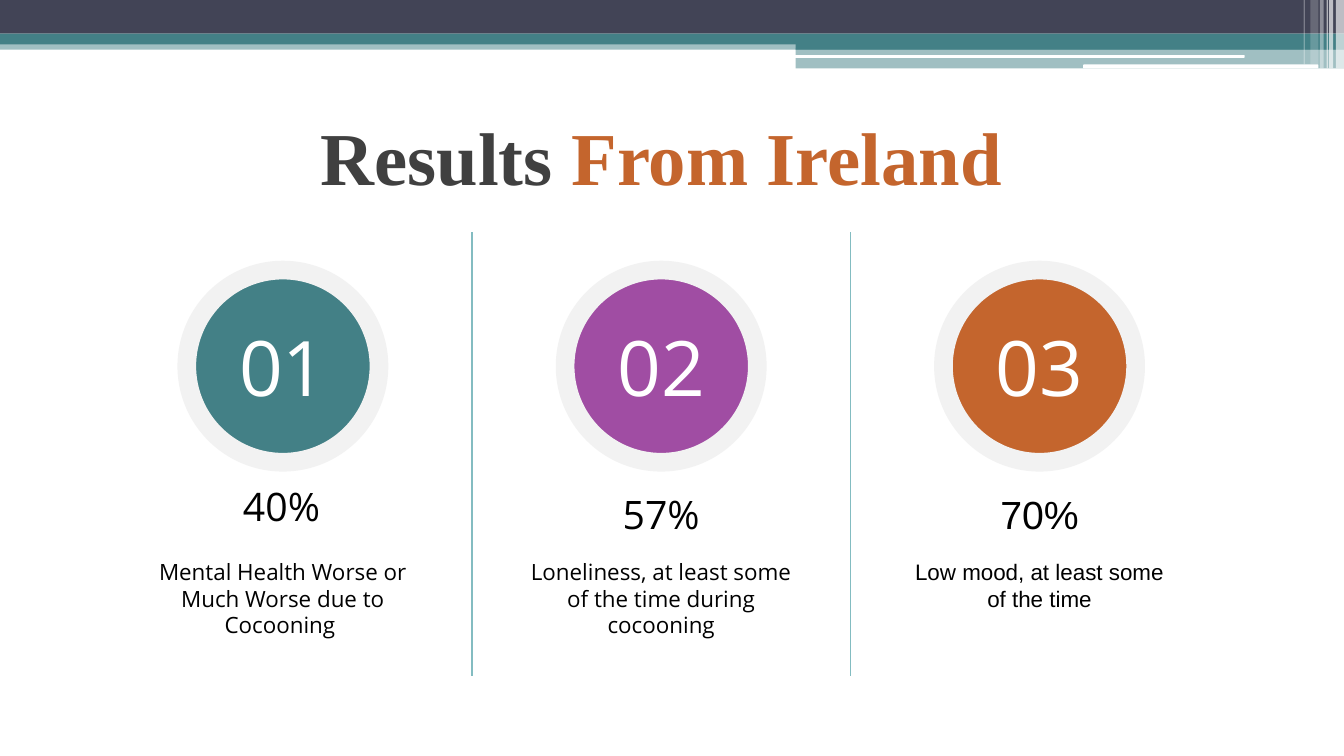
import pptx
import pptx.util
import pptx.dml.color
import pptx.enum.shapes
import pptx.enum.text
import pptx.oxml.ns
from lxml import etree

PX = 9144  # 100 px to the inch
SHAPES = pptx.enum.shapes.MSO_SHAPE
ANCHOR = pptx.enum.text.MSO_ANCHOR
AUTO_SIZE = pptx.enum.text.MSO_AUTO_SIZE
SANS, SERIF, ARIAL = "Open Sans", "Times New Roman", "Arial"
TEAL, NAVY, PURPLE, ORANGE = "438086", "424456", "A04DA3", "C4652D"
WHITE, BLACK, GREY, PALE, RULE = "FFFFFF", "000000", "404040", "F2F2F2", "83BCC1"


def emu(px):
    return pptx.util.Emu(round(px * PX))


def place(box):
    return [emu(px) for px in box]


def paint(color_format, color):
    color_format.rgb = pptx.dml.color.RGBColor.from_string(color)


def add_shape(page, kind, box, color, opacity=100):
    shape = page.shapes.add_shape(kind, *place(box))
    shape.shadow.inherit = False
    shape.fill.solid()
    paint(shape.fill.fore_color, color)
    shape.line.fill.background()
    if opacity < 100:
        tint = shape.fill._xPr.find(".//" + pptx.oxml.ns.qn("a:srgbClr"))
        alpha = etree.SubElement(tint, pptx.oxml.ns.qn("a:alpha"))
        alpha.set("val", str(opacity * 1000))
    return shape


def write(shape, spans, size, font, anchor, bold=False):
    """Write one centred paragraph; spans are (text, color) pairs."""
    frame = shape.text_frame
    frame.word_wrap = True
    frame.vertical_anchor = anchor
    frame.margin_left = frame.margin_right = emu(8)
    frame.margin_top = frame.margin_bottom = emu(4)
    para = frame.paragraphs[0]
    para.alignment = pptx.enum.text.PP_ALIGN.CENTER
    for text, color in spans:
        span = para.add_run()
        span.text = text
        span.font.size = pptx.util.Pt(size)
        span.font.name = font
        span.font.bold = bold
        paint(span.font.color, color)


def add_text(page, box, text, size, font, anchor):
    label = page.shapes.add_textbox(*place(box))
    write(label, [(text, BLACK)], size, font, anchor)
    label.text_frame.auto_size = AUTO_SIZE.SHAPE_TO_FIT_TEXT


def add_header(page, box):
    left, top, width, height = box
    step = 591  # where the lower band starts
    # Bands: x, y, height, color, opacity; each runs to the right edge
    for x, y, band_height, color, opacity in [
        (0, 30, 7, TEAL, 50),
        (0, 0, 25, NAVY, 100),
        (0, 25, 8, TEAL, 100),
        (step + 1, 30, 7, TEAL, 100),
        (step + 1, 36, 15, TEAL, 50),
    ]:
        band = (left + x, top + y, width - x, band_height)
        add_shape(page, SHAPES.RECTANGLE, band, color, opacity)
    # White slits
    for x, y, slit_width, slit_height in [(step, 41, 335, 2), (806, 48, 175, 3)]:
        slit = (left + x, top + y, slit_width, slit_height)
        add_shape(page, SHAPES.ROUNDED_RECTANGLE, slit, WHITE)
    # Translucent stripes at the right end
    for x, stripe_width, stripe_height, opacity in [
        (994, 6, height, 65),
        (989, 3, height, 65),
        (987, 1, height, 60),
        (982, 3, height, 40),
        (975, 6, height - 3, 20),
        (970, 1, height - 3, 30),
    ]:
        stripe = (left + x, top, stripe_width, stripe_height)
        add_shape(page, SHAPES.RECTANGLE, stripe, WHITE, opacity)


def add_title(page, box):
    title = page.shapes.title
    title.left, title.top, title.width, title.height = place(box)
    spans = [("Results ", GREY), ("From Ireland", ORANGE)]
    write(title, spans, 40, SERIF, ANCHOR.MIDDLE, bold=True)


def add_result(page, box, number, color, percent, shift, finding, lines, font):
    left, top, width, _ = box
    # Numbered disc
    disc = 143
    disc_box = (left + (width - disc) / 2, top + 28, disc, disc)
    circle = add_shape(page, SHAPES.OVAL, disc_box, color)
    paint(circle.line.color, PALE)
    circle.line.width = pptx.util.Pt(10)
    write(circle, [(number, WHITE)], 41, SANS, ANCHOR.MIDDLE)
    # Percentage, which may be shifted, and finding
    across, down = shift
    percent_box = (left + across, top + 190 + down, width, 41)
    add_text(page, percent_box, percent, 21, font, ANCHOR.BOTTOM)
    finding_box = (left, top + 238, width, 5 + 20 * lines)
    add_text(page, finding_box, finding, 12, font, ANCHOR.TOP)


def add_divider(page, x, top, height):
    divider = page.shapes.add_connector(
        pptx.enum.shapes.MSO_CONNECTOR.STRAIGHT,
        emu(x), emu(top), emu(x), emu(top + height))
    paint(divider.line.color, RULE)
    divider.line.width = pptx.util.Pt(0.75)
    properties = divider._element.spPr
    etree.SubElement(properties, pptx.oxml.ns.qn("a:effectLst"))


def add_results(page, box):
    left, top, width, height = box
    results = [
        ("01", TEAL, "40%", (-1, -6),
         "Mental Health Worse or Much Worse due to Cocooning ", 3, SANS),
        ("02", PURPLE, "57%", (0, 0),
         "Loneliness, at least some of the time during cocooning", 2, SANS),
        ("03", ORANGE, "70%", (0, 0),
         "Low mood, at least some of the time", 2, ARIAL),
    ]
    column = 213
    pitch = (width - column) / (len(results) - 1)
    for index, result in enumerate(results):
        x = left + index * pitch
        add_result(page, (x, top, column, height), *result)
        if index:
            add_divider(page, x - (pitch - column) / 2, top, height)


def main():
    deck = pptx.Presentation()
    deck.slide_width = emu(1000)
    deck.slide_height = deck.slide_width * 9 // 16
    page = deck.slides.add_slide(deck.slide_layouts[5])
    add_header(page, (0, 0, 1000, 51))
    add_title(page, (42, 72, 900, 88))
    add_results(page, (104, 173, 776, 330))
    deck.save("out.pptx")


if __name__ == "__main__":
    main()
